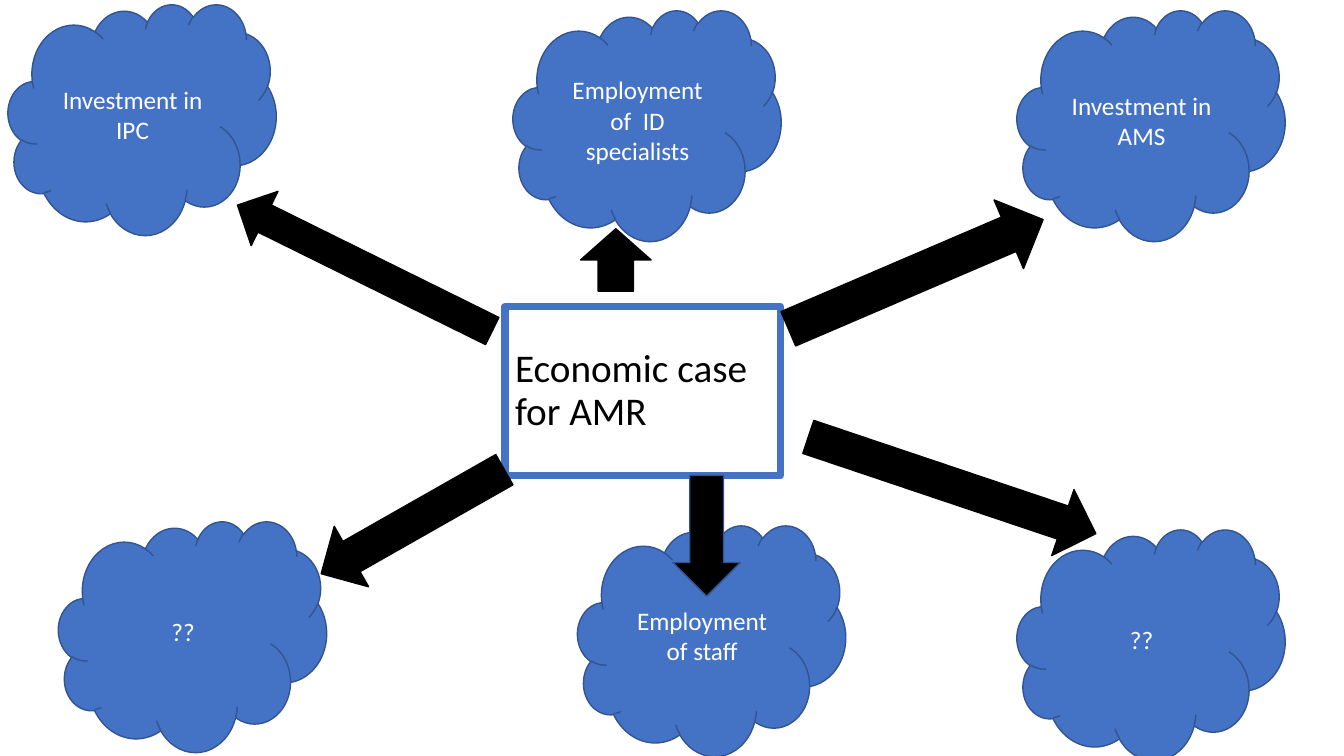
"""Build a slide with an economic case at the centre and six clouds around it."""
from pptx import Presentation
from pptx.dml.color import RGBColor
from pptx.enum.shapes import MSO_SHAPE
from pptx.enum.text import MSO_ANCHOR, MSO_AUTO_SIZE, PP_ALIGN
from pptx.oxml.ns import qn
from pptx.util import Pt
from lxml.etree import SubElement


def paint(color_format, hex_color):
    color_format.rgb = RGBColor.from_string(hex_color)


def write(sp, text, size, color, para_format):
    tf = sp.text_frame
    tf.word_wrap = True
    tf.auto_size = MSO_AUTO_SIZE.NONE
    tf.vertical_anchor = MSO_ANCHOR.MIDDLE
    p = tf.paragraphs[0]
    for name, value in para_format.items():
        setattr(p, name, value)
    r = p.add_run()
    r.text = text
    for name, value in {"size": Pt(size), "name": "Calibri"}.items():
        setattr(r.font, name, value)
    paint(r.font.color, color)


BLUE, EDGE, BLACK, WHITE = "4472C4", "325491", "000000", "FFFFFF"
CLOUD_W, CLOUD_H = 191.5, 164.9
RIGHT_X, TOP_Y = 726.5, 7.2

prs = Presentation()
prs.slide_width, prs.slide_height = Pt(960), Pt(540)
s = prs.slides.add_slide(prs.slide_layouts[5])

title = s.shapes.title
box = {"left": 360.7, "top": 218.9, "width": 196.6, "height": 121}
for name, value in box.items():
    setattr(title, name, Pt(value))
geom = SubElement(title.element.spPr, qn("a:prstGeom"), prst="roundRect")
SubElement(geom, qn("a:avLst"))
paint(title.line.color, BLUE)
title.line.width = Pt(5.25)
write(title, "Economic case for AMR", 28, BLACK,
      {"alignment": PP_ALIGN.LEFT, "line_spacing": 0.9, "space_before": Pt(10)})

clouds = [
    ("Investment in AMS", RIGHT_X, TOP_Y),
    ("??", 41.8, 372.2),
    ("Employment of staff", 412.6, 375.1),
    ("??", RIGHT_X, 378),
    ("Employment of  ID specialists", 366.5, TOP_Y),
    ("Investment in IPC", 5.8, 2.9),
]
for text, x, y in clouds:
    sp = s.shapes.add_shape(MSO_SHAPE.CLOUD, Pt(x), Pt(y), Pt(CLOUD_W), Pt(CLOUD_H))
    sp.shadow.inherit = False
    sp.fill.solid()
    paint(sp.fill.fore_color, BLUE)
    paint(sp.line.color, EDGE)
    sp.line.width = Pt(1)
    write(sp, text, 18, WHITE, {"alignment": PP_ALIGN.CENTER})

arrows = [
    (MSO_SHAPE.LEFT_ARROW, 159.1, 169.9, 203, 43.2, 26.3, BLACK),
    (MSO_SHAPE.RIGHT_ARROW, 571.7, 321.8, 216.7, 49.7, 18.6, BLACK),
    (MSO_SHAPE.RIGHT_ARROW, 555.1, 169.2, 198, 53.3, 336.8, BLACK),
    (MSO_SHAPE.RIGHT_ARROW, 461.5, 358.6, 86.4, 48.2, 90, EDGE),
    (MSO_SHAPE.UP_ARROW, 414.7, 163.4, 50.4, 44.6, 0, BLACK),
    (MSO_SHAPE.RIGHT_ARROW, 219.6, 347.8, 150.5, 49.7, 150.4, BLACK),
]
for kind, x, y, w, h, angle, edge in arrows:
    sp = s.shapes.add_shape(kind, Pt(x), Pt(y), Pt(w), Pt(h))
    sp.rotation = angle
    sp.shadow.inherit = False
    sp.fill.solid()
    paint(sp.fill.fore_color, BLACK)
    paint(sp.line.color, edge)
    sp.line.width = Pt(1)

prs.save("out.pptx")
